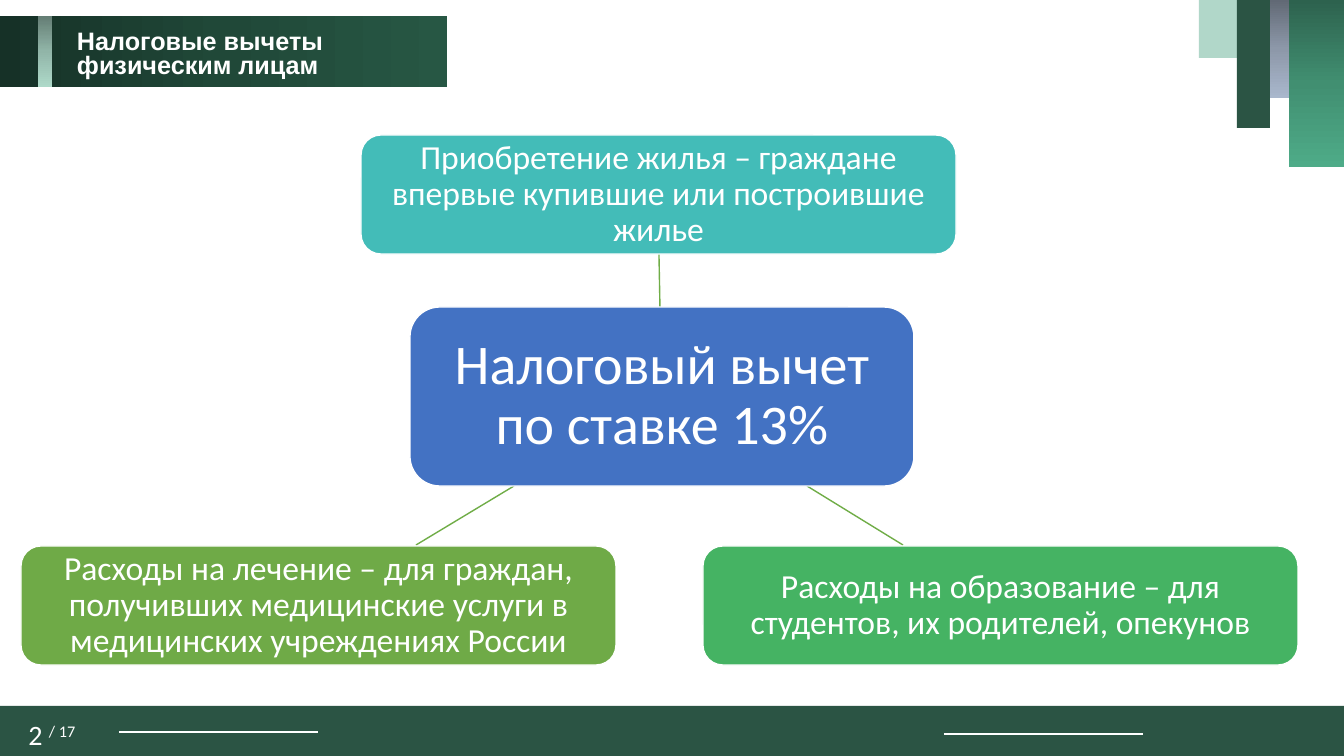
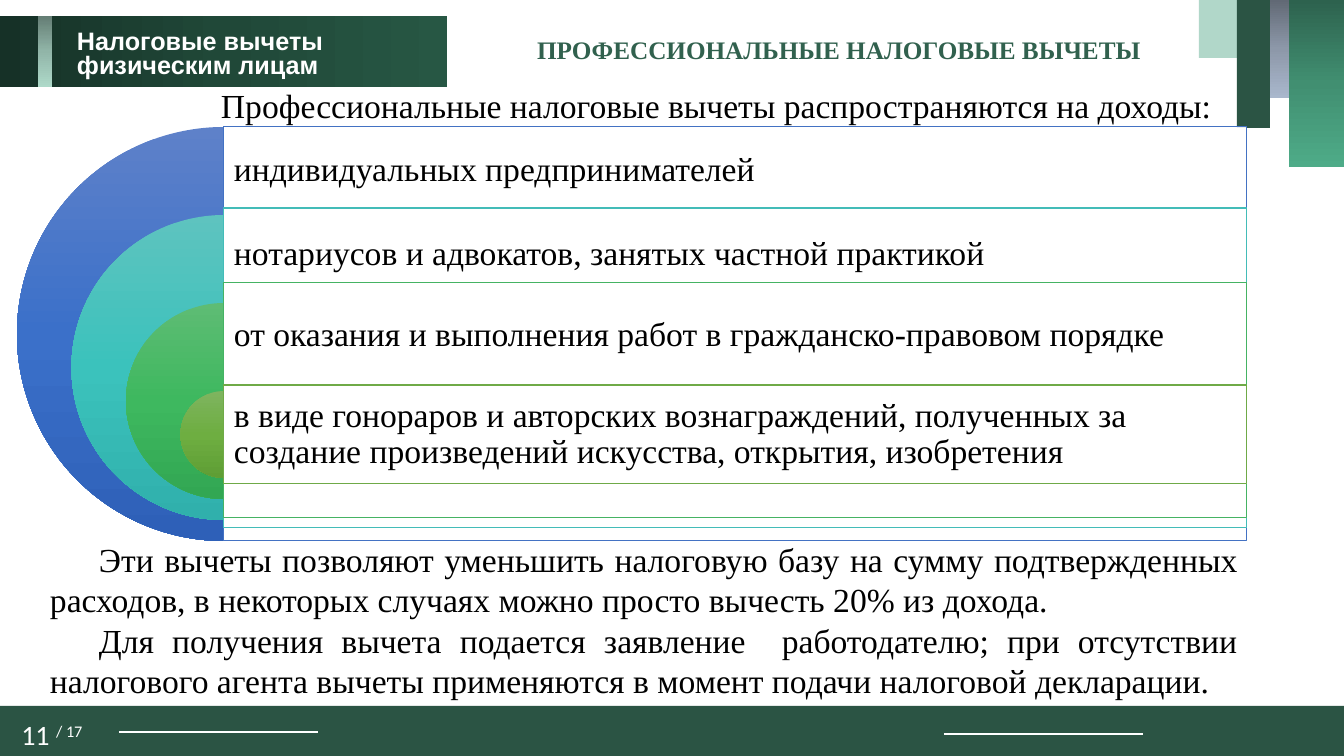
import copy

import pptx
import pptx.dml.color
import pptx.enum.shapes
import pptx.enum.text
import pptx.oxml.ns
import pptx.oxml.xmlchemy
import pptx.util

RGB = pptx.dml.color.RGBColor
SHAPE = pptx.enum.shapes.MSO_SHAPE
STRAIGHT = pptx.enum.shapes.MSO_CONNECTOR.STRAIGHT
ALIGN = pptx.enum.text.PP_ALIGN
ANCHOR = pptx.enum.text.MSO_ANCHOR
qn = pptx.oxml.ns.qn
PX = 914400 / 100.8  # EMU in one px

WHITE = RGB(0xFF, 0xFF, 0xFF)
BLACK = RGB(0x00, 0x00, 0x00)
DARK_GREEN = RGB(0x2B, 0x54, 0x44)
HEADING_GREEN = RGB(0x31, 0x61, 0x4E)
MINT = RGB(0xB1, 0xD7, 0xC9)
BLUE = RGB(0x43, 0x72, 0xC3)
TEAL = RGB(0x43, 0xBC, 0xB8)
GREEN = RGB(0x45, 0xB3, 0x63)
OLIVE = RGB(0x6F, 0xAA, 0x47)
LINK_GREEN = RGB(0x70, 0xAD, 0x47)

# Gradients: three colours, evenly spaced
GREY_FADE = (RGB(0x61, 0x69, 0x75), RGB(0x8D, 0x98, 0xA9), RGB(0xA9, 0xB7, 0xCC))
GREEN_FADE = (RGB(0x2D, 0x62, 0x4E), RGB(0x41, 0x8F, 0x71), RGB(0x4E, 0xAB, 0x88))
TITLE_FADE = (RGB(0x16, 0x31, 0x27), RGB(0x20, 0x48, 0x38), RGB(0x27, 0x57, 0x44))
MINT_FADE = (RGB(0x64, 0x7D, 0x74), RGB(0x91, 0xB5, 0xA8), RGB(0xAE, 0xD9, 0xC9))
BLUE_FADE = (RGB(0x5E, 0x81, 0xC9), RGB(0x3B, 0x70, 0xC9), RGB(0x2E, 0x60, 0xB8))
TEAL_FADE = (RGB(0x5E, 0xC3, 0xBF), RGB(0x3B, 0xC2, 0xBC), RGB(0x30, 0xB0, 0xAC))
LEAF_FADE = (RGB(0x5E, 0xBC, 0x74), RGB(0x3E, 0xB8, 0x5F), RGB(0x32, 0xA7, 0x53))
OLIVE_FADE = (RGB(0x7E, 0xB4, 0x5F), RGB(0x6E, 0xAE, 0x41), RGB(0x5F, 0x9E, 0x35))

SANS, SERIF, TITLE_FONT = "Calibri", "Times New Roman", "Arial"


def add_block(page, area, fill, line=None, width=1, kind=SHAPE.RECTANGLE, angle=270):
    """Add a shape with a plain colour or a three-colour gradient."""
    block = page.shapes.add_shape(kind, *(round(v * PX) for v in area))
    block.shadow.inherit = False
    if isinstance(fill, RGB):
        block.fill.solid()
        block.fill.fore_color.rgb = fill
    else:
        block.fill.gradient()
        block.fill.gradient_angle = angle
        first = block._element.spPr.find(".//" + qn("a:gs"))
        first.addnext(copy.deepcopy(first))
        for number, stop in enumerate(block.fill.gradient_stops):
            stop.position = number / 2
            stop.color.rgb = fill[number]
    if line is None:
        block.line.fill.background()
    else:
        block.line.color.rgb = line
        block.line.width = pptx.util.Pt(width)
    return block


def write(page, target, texts, font, size, color, bold=False, align=ALIGN.LEFT,
          spacing=None, margins=(10, 5, 10, 5), anchor=ANCHOR.TOP, indent=0):
    """Write paragraphs into a shape, or into a new text box at an area."""
    if isinstance(target, tuple):
        target = page.shapes.add_textbox(*(round(v * PX) for v in target))
    frame = target.text_frame
    frame.word_wrap = True
    frame.vertical_anchor = anchor
    (frame.margin_left, frame.margin_top,
     frame.margin_right, frame.margin_bottom) = (round(v * PX) for v in margins)
    for number, text in enumerate(texts):
        para = frame.add_paragraph() if number else frame.paragraphs[0]
        para.text = text
        para.alignment = align
        if spacing:
            para.line_spacing = spacing
        if indent:
            para._p.get_or_add_pPr().set("indent", str(round(indent * PX)))
        for span in para.runs:
            span.font.name = font
            span.font.size = pptx.util.Pt(size)
            span.font.bold = bold
            span.font.color.rgb = color
    return target


deck = pptx.Presentation()
deck.slide_width = round(1344 * PX)
deck.slide_height = round(756 * PX)

# Shared parts: footer, corner bars, title band
pages = []
for page_number in (2, 11):
    page = deck.slides.add_slide(deck.slide_layouts[6])
    pages.append(page)

    add_block(page, (0, 706, 1344, 50), DARK_GREEN)
    links = [(119, 732, 318, 732, WHITE, 1.5), (944, 734, 1143, 734, WHITE, 1.5)]
    if page_number == 2:
        links += [(660, 307, 659, 254, LINK_GREEN, 1),
                  (807, 486, 903, 545, LINK_GREEN, 1),
                  (514, 486, 416, 545, LINK_GREEN, 1)]
    for *ends, color, width in links:
        link = page.shapes.add_connector(STRAIGHT, *(round(v * PX) for v in ends))
        link.line.color.rgb = color
        link.line.width = pptx.util.Pt(width)
        link._element.spPr.append(pptx.oxml.xmlchemy.OxmlElement("a:effectLst"))

    counter = write(page, (-3, 719, 110, 38), [f"{page_number} "], SANS, 20, WHITE,
                    align=ALIGN.CENTER, spacing=0.8)
    total = counter.text_frame.paragraphs[0].add_run()
    total.text = "/ 17"
    total.font.name = SANS
    total.font.size = pptx.util.Pt(20)
    total.font.color.rgb = WHITE
    total._r.get_or_add_rPr().set("baseline", "30000")

    for left, width, height, fill in ((1269, 20, 98, GREY_FADE),
                                      (1289, 55, 167, GREEN_FADE),
                                      (1199, 38, 58, MINT),
                                      (1237, 33, 128, DARK_GREEN)):
        add_block(page, (left, 0, width, height), fill)

    add_block(page, (0, 16, 447, 71), TITLE_FADE, angle=0)
    add_block(page, (38, 16, 14, 71), MINT_FADE)
    write(page, (67, 26, 276, 59), ["Налоговые вычеты \nфизическим лицам"],
          TITLE_FONT, 18, WHITE, bold=True, spacing=0.8)

tree_page, list_page = pages

# Slide 1: central topic and its three branches
for area, fill, text, size, margin in (
        ((410, 307, 504, 179), BLUE, "Налоговый вычет\nпо ставке 13%", 40, 11),
        ((361, 135, 595, 119), TEAL,
         "Приобретение жилья – граждане впервые купившие или построившие жилье", 24, 7),
        ((703, 546, 595, 119), GREEN,
         "Расходы на образование – для студентов, их родителей, опекунов", 24, 7),
        ((21, 546, 595, 119), OLIVE,
         "Расходы на лечение – для граждан, получивших медицинские услуги "
         "в медицинских учреждениях России", 24, 7)):
    topic = add_block(tree_page, area, fill, WHITE, kind=SHAPE.ROUNDED_RECTANGLE)
    write(tree_page, topic, [text], SANS, size, WHITE, align=ALIGN.CENTER,
          spacing=0.9, margins=(margin,) * 4, anchor=ANCHOR.MIDDLE)

# Slide 2: heading
write(list_page, (527, 29, 630, 40), ["ПРОФЕССИОНАЛЬНЫЕ НАЛОГОВЫЕ ВЫЧЕТЫ"],
      SERIF, 18, HEADING_GREEN, bold=True)

# Slide 2: nested half circles, each with a framed row
rows = (
    (127, 414, 88, BLUE, BLUE_FADE, "индивидуальных предпринимателей"),
    (208, 320, 93, TEAL, TEAL_FADE, "нотариусов и адвокатов, занятых частной практикой"),
    (283, 235, 105, GREEN, LEAF_FADE,
     "от оказания и выполнения работ в гражданско-правовом порядке"),
    (385, 99, 99, OLIVE, OLIVE_FADE,
     "в виде гонораров и авторских вознаграждений, полученных за создание "
     "произведений искусства, открытия, изобретения"),
)
for number, (top, height, text_height, color, fade, text) in enumerate(rows):
    diameter = 414 - 109 * number
    half = add_block(list_page, (224 - diameter / 2, 127 + 88 * number, diameter, diameter),
                     fade, kind=SHAPE.PIE)
    half.adjustments[0] = 54
    half.adjustments[1] = 162
    row = add_block(list_page, (224, top, 1023, height), WHITE, color, 0.75)
    alpha = pptx.oxml.xmlchemy.OxmlElement("a:alpha")
    alpha.set("val", "90000")
    row._element.spPr.find(qn("a:solidFill"))[0].append(alpha)
    write(list_page, row, [text], SERIF, 24, BLACK, spacing=0.9,
          margins=(10, 10, 10, 10 + height - text_height), anchor=ANCHOR.MIDDLE)

# Slide 2: lead-in and closing text
write(list_page, (211, 80, 1120, 50),
      ["Профессиональные налоговые вычеты распространяются на доходы:"], SERIF, 24, BLACK)
write(list_page, (40, 534, 1208, 173),
      ["Эти вычеты позволяют уменьшить налоговую базу на сумму подтвержденных расходов, "
       "в некоторых случаях можно просто вычесть 20% из дохода.",
       "Для получения вычета подается заявление  работодателю; при отсутствии налогового "
       "агента вычеты применяются в момент подачи налоговой декларации."],
      SERIF, 24, BLACK, align=ALIGN.JUSTIFY, indent=49)

deck.save("out.pptx")
